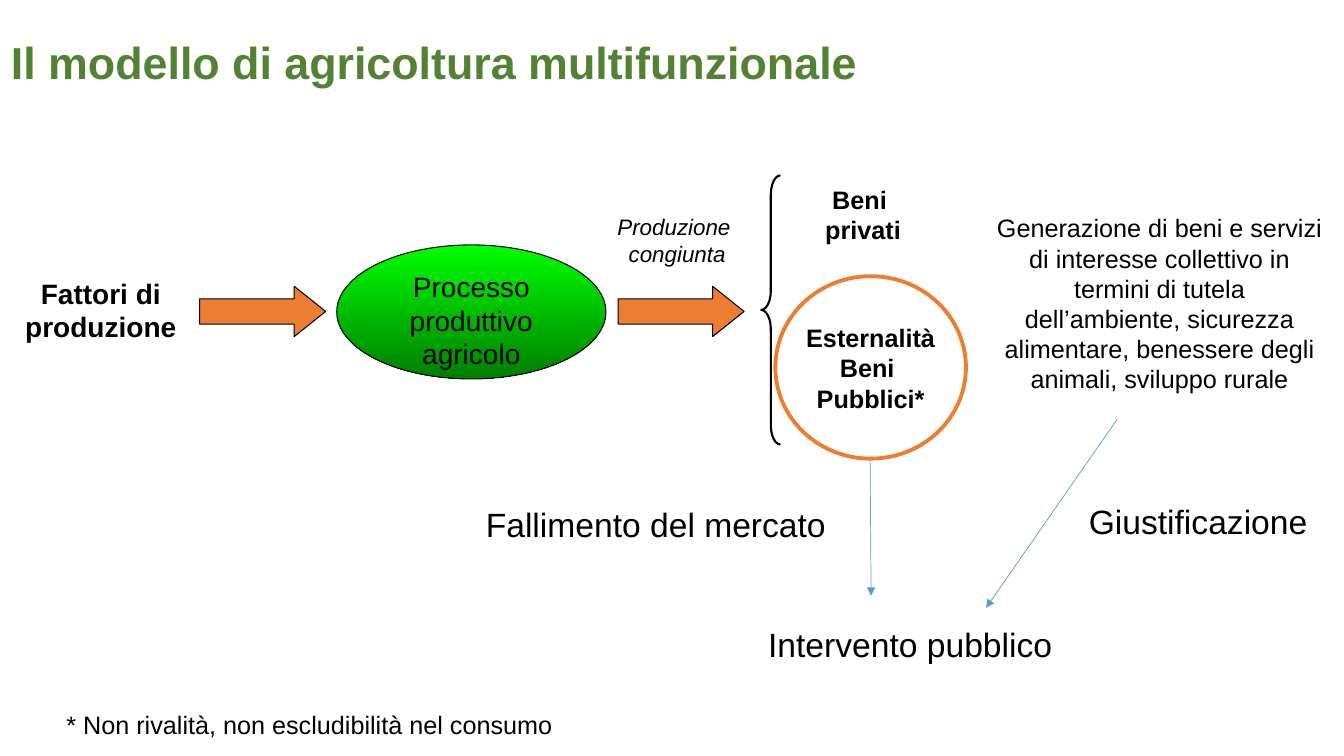
from lxml import etree
from pptx import Presentation
from pptx.dml.color import RGBColor
from pptx.enum.shapes import MSO_CONNECTOR, MSO_SHAPE
from pptx.enum.text import MSO_ANCHOR, MSO_AUTO_SIZE, PP_ALIGN
from pptx.oxml.ns import qn
from pptx.util import Pt

PX = 9144
STRAIGHT = MSO_CONNECTOR.STRAIGHT
ELLIPSE = MSO_SHAPE.OVAL
RIGHT_ARROW = MSO_SHAPE.RIGHT_ARROW
LEFT_BRACE = MSO_SHAPE.LEFT_BRACE
LEFT, CENTER = PP_ALIGN.LEFT, PP_ALIGN.CENTER
TOP, MIDDLE = MSO_ANCHOR.TOP, MSO_ANCHOR.MIDDLE
NO_AUTOSIZE = MSO_AUTO_SIZE.NONE

BLACK, ORANGE, BLUE, GREEN = "000000", "ED7D31", "5B9BD5", "548235"
PROCESS_GRADIENT = ("00FF00", "007E00")


def color(value):
    return RGBColor.from_string(value)


def set_attributes(target, values):
    for name, value in values.items():
        setattr(target, name, value)


def place(box, left, top, width, height):
    return [length * PX for length in (box[0] + left, box[1] + top, width, height)]


def write(shape, lines, size, align=CENTER, wrap=True, anchor=TOP,
          text_color=BLACK, spacing=1.0, **style):
    frame = shape.text_frame
    set_attributes(frame, {
        "word_wrap": wrap, "auto_size": NO_AUTOSIZE, "vertical_anchor": anchor,
        "margin_left": 10 * PX, "margin_right": 10 * PX,
        "margin_top": 5 * PX, "margin_bottom": 5 * PX,
    })
    for index, line in enumerate(lines):
        paragraph = frame.add_paragraph() if index else frame.paragraphs[0]
        set_attributes(paragraph, {"alignment": align, "line_spacing": spacing})
        run = paragraph.add_run()
        run.text = line
        set_attributes(run.font, {"name": "Arial", "size": Pt(size), **style})
        run.font.color.rgb = color(text_color)


def add_text(slide, position, lines, size, **options):
    write(slide.shapes.add_textbox(*position), lines, size, **options)


def add_figure(slide, kind, position, line_color, line_width, fill=None, adjustments=()):
    shape = slide.shapes.add_shape(kind, *position)
    shape.shadow.inherit = False
    if fill:
        shape.fill.solid()
        shape.fill.fore_color.rgb = color(fill)
    else:
        shape.fill.background()
    shape.line.color.rgb = color(line_color)
    shape.line.width = Pt(line_width)
    for index, value in enumerate(adjustments):
        shape.adjustments[index] = value
    return shape


def add_thin_arrow(slide, box, start, end):
    points = [(box[axis] + point[axis]) * PX for point in (start, end) for axis in (0, 1)]
    connector = slide.shapes.add_connector(STRAIGHT, *points)
    connector.line.color.rgb = color(BLUE)
    connector.line.width = Pt(0.5)
    line = connector.line._get_or_add_ln()
    etree.SubElement(line, qn("a:tailEnd"), type="triangle")
    etree.SubElement(connector._element.spPr, qn("a:effectLst"))


def add_title(slide, box):
    add_text(slide, place(box, 0, 0, 975, 125), ["Il modello di agricoltura multifunzionale"],
             32, align=LEFT, anchor=MIDDLE, text_color=GREEN, spacing=0.9, bold=True)


def add_production(slide, box):
    add_text(slide, place(box, 0, 62, 250, 80), ["Fattori di produzione"], 20, bold=True)
    process = add_figure(slide, ELLIPSE, place(box, 359, 36, 267, 133), BLACK, 0.75)
    process.fill.gradient()
    process.fill.gradient_angle = 270
    for position, (stop, value) in enumerate(zip(process.fill.gradient_stops, PROCESS_GRADIENT)):
        stop.position = position
        stop.color.rgb = color(value)
    write(process, ["Processo produttivo", "agricolo"], 20)
    for left in (223, 638):
        add_figure(slide, RIGHT_ARROW, place(box, left, 77, 125, 50), BLACK, 0.75,
                   ORANGE, (0.5, 0.625))
    add_text(slide, place(box, 627, 0, 139, 64), ["Produzione ", "congiunta"], 16,
             wrap=False, italic=True)


def add_outputs(slide, box):
    add_figure(slide, LEFT_BRACE, place(box, 0, 0, 19, 267), BLACK, 1.5, adjustments=(1, 0.5))
    add_figure(slide, ELLIPSE, place(box, 14, 100, 189, 181), ORANGE, 2.75)
    goods = (
        ((53, 4, 96, 71), ["Beni ", "privati"]),
        ((34, 141, 149, 101), ["Esternalità", "Beni ", "Pubblici*"]),
    )
    for position, lines in goods:
        add_text(slide, place(box, *position), lines, 18, wrap=False, bold=True)
    benefits = ("Generazione di beni e servizi di interesse collettivo in termini di tutela "
                "dell’ambiente, sicurezza alimentare, benessere degli animali, sviluppo rurale")
    add_text(slide, place(box, 223, 32, 344, 192), [benefits], 18)


def add_intervention(slide, box):
    add_thin_arrow(slide, box, (391, 40), (392, 175))
    add_thin_arrow(slide, box, (636, 0), (506, 187))
    labels = (
        ((0, 79, 361, 50), "Fallimento del mercato"),
        ((598, 76, 239, 50), "Giustificazione"),
        ((280, 198, 305, 50), "Intervento pubblico"),
    )
    for position, label in labels:
        add_text(slide, place(box, *position), [label], 24, align=LEFT, wrap=False)


def add_footnote(slide, box):
    add_text(slide, place(box, 0, 0, 507, 40),
             ["* Non rivalità, non escludibilità nel consumo"], 18, align=LEFT, wrap=False)


def main():
    presentation = Presentation()
    set_attributes(presentation, {"slide_width": 1333 * PX, "slide_height": 750 * PX})
    slide = presentation.slides.add_slide(presentation.slide_layouts[6])
    add_title(slide, (1, 2))
    add_production(slide, (-25, 207))
    add_outputs(slide, (755, 174))
    add_intervention(slide, (472, 416))
    add_footnote(slide, (56, 699))
    presentation.save("out.pptx")


if __name__ == "__main__":
    main()
